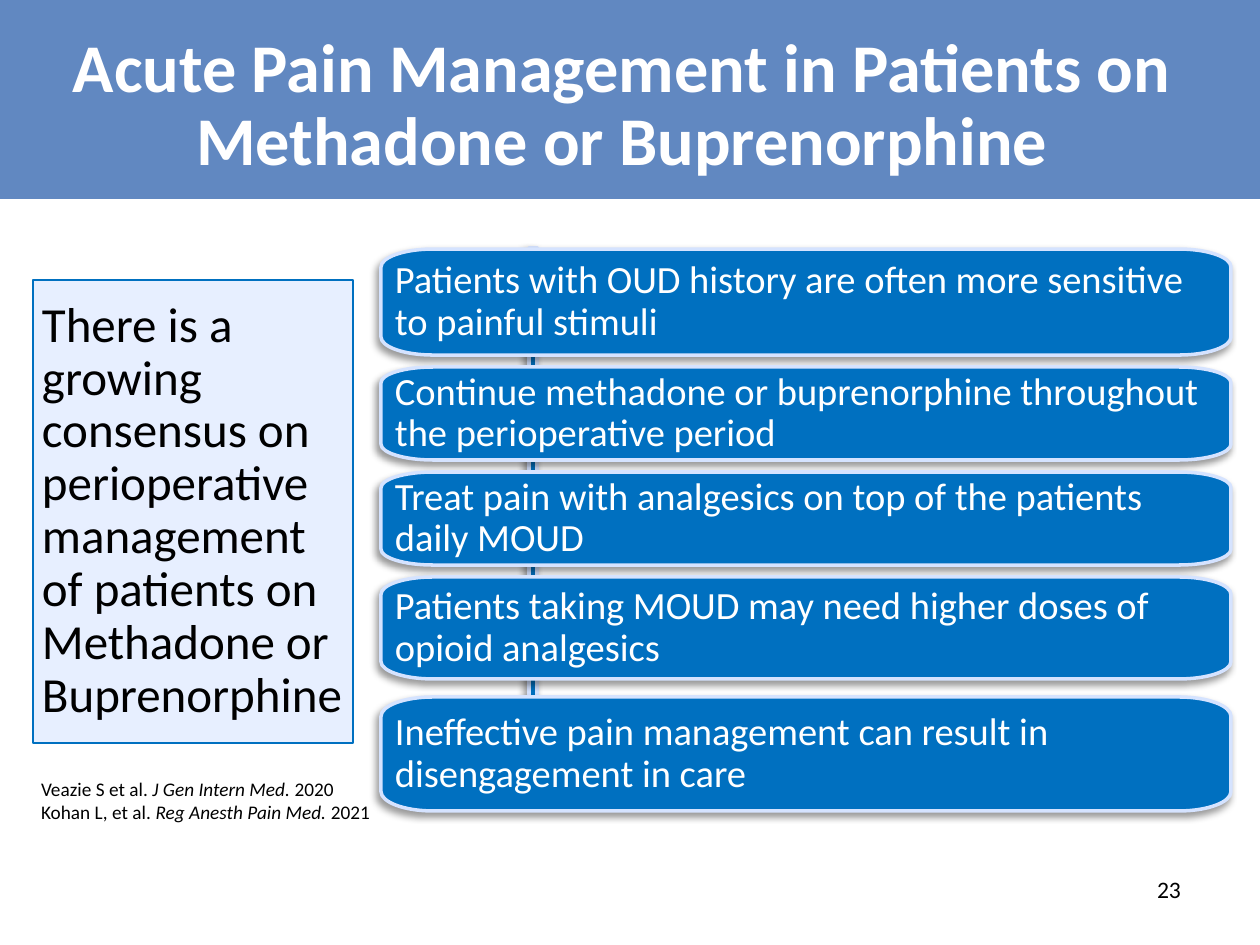
from lxml import etree
from pptx import Presentation
from pptx.dml.color import RGBColor
from pptx.enum.shapes import MSO_SHAPE as Shape
from pptx.enum.text import MSO_ANCHOR as Anchor, PP_ALIGN as Align
from pptx.oxml.ns import qn
from pptx.util import Emu, Pt

PX = 914400 / 126
BLUE, PALE_BLUE, WHITE, BLACK = "0070C0", "D5E3FF", "FFFFFF", "000000"

BAR_LEFT, BAR_WIDTH, CORNER_WIDTH = 381, 850, 52
CORNER_RATIO = 0.17
ARC_PULL = 0.55  # how far the control points lie towards the corner

ADVICE = [  # top, height, text
    (249, 106, "Patients with OUD history are often more sensitive to painful stimuli"),
    (367, 93, "Continue methadone or buprenorphine throughout the perioperative period"),
    (472, 93, "Treat pain with analgesics on top of the patients daily MOUD"),
    (577, 102, "Patients taking MOUD may need higher doses of opioid analgesics"),
    (697, 114, "Ineffective pain management can result in disengagement in care"),
]
CITATIONS = [
    [("Veazie S et al. ", False), ("J Gen Intern Med. ", True), ("2020", False)],
    [("Kohan L, et al. ", False), ("Reg Anesth Pain Med. ", True), ("2021", False)],
]


def px(length):
    return Emu(round(length * PX))


def color(value):
    return RGBColor.from_string(value)


def paint(shape, fill, line=None, width=0):
    shape.shadow.inherit = False
    shape.fill.solid()
    shape.fill.fore_color.rgb = color(fill)
    if line:
        shape.line.color.rgb = color(line)
        shape.line.width = Pt(width)
    else:
        shape.line.fill.background()


def add_shadow(shape):
    """Cast a soft shadow down and to the left."""
    effects = shape._element.spPr.find(qn("a:effectLst"))
    shadow = etree.SubElement(
        effects, qn("a:outerShdw"), blurRad=str(Pt(4)), dist=str(Pt(3)),
        dir=str(135 * 60000), algn="ctr", rotWithShape="0")
    tint = etree.SubElement(shadow, qn("a:srgbClr"), val=BLACK)
    etree.SubElement(tint, qn("a:alpha"), val="40000")


def write(shape, paragraphs, size, ink=BLACK, bold=None, align=Align.LEFT,
          anchor=Anchor.TOP, spacing=None, insets=(12, 6)):
    """Fill a shape with paragraphs, each a list of (text, italic) runs."""
    frame = shape.text_frame
    frame.word_wrap = True
    frame.vertical_anchor = anchor
    frame.margin_left = frame.margin_right = px(insets[0])
    frame.margin_top = frame.margin_bottom = px(insets[1])
    for index, runs in enumerate(paragraphs):
        para = frame.add_paragraph() if index else frame.paragraphs[0]
        para.alignment = align
        if spacing:
            para.line_spacing = spacing
        for text, italic in runs:
            span = para.add_run()
            span.text = text
            font = span.font
            font.name, font.size = "Calibri", Pt(size)
            font.bold, font.italic = bold, italic
            font.color.rgb = color(ink)


def add_text(page, left, top, width, height, paragraphs, size, **style):
    box = page.shapes.add_textbox(px(left), px(top), px(width), px(height))
    write(box, paragraphs, size, **style)


def add_rect(page, left, top, width, height, fill, line=None, line_width=0):
    rect = page.shapes.add_shape(
        Shape.RECTANGLE, px(left), px(top), px(width), px(height))
    paint(rect, fill, line, line_width)
    return rect


def bar_outline(top, height):
    """Ends of the corner arcs, clockwise from the left side's upper end."""
    rise = height * CORNER_RATIO
    right, bottom = BAR_LEFT + BAR_WIDTH, top + height
    near, far = BAR_LEFT + CORNER_WIDTH, right - CORNER_WIDTH
    upper, lower = top + rise, bottom - rise
    corners = [(BAR_LEFT, upper), (near, top), (far, top), (right, upper),
               (right, lower), (far, bottom), (near, bottom), (BAR_LEFT, lower)]
    return [(px(x), px(y)) for x, y in corners]


def round_corners(bar):
    """Turn every other straight segment of the outline into a curve."""
    outline = next(bar._element.spPr.iter(qn("a:path")))
    points = [(int(point.get("x")), int(point.get("y")))
              for point in outline.iter(qn("a:pt"))]
    segments = outline.findall(qn("a:lnTo"))
    for index in range(0, len(segments), 2):
        start, end = points[index], points[index + 1]
        leaves_upright = index % 4 == 0
        corner = (start[0], end[1]) if leaves_upright else (end[0], start[1])
        curve = etree.Element(qn("a:cubicBezTo"))
        controls = [[round(a + (c - a) * ARC_PULL) for a, c in zip(anchor, corner)]
                    for anchor in (start, end)]
        for x, y in (*controls, end):
            etree.SubElement(curve, qn("a:pt"), x=str(x), y=str(y))
        outline.replace(segments[index], curve)


def add_bar(page, top, height, text):
    start, *rest = bar_outline(top, height)
    builder = page.shapes.build_freeform(*start)
    builder.add_line_segments(rest, close=True)
    bar = builder.convert_to_shape()
    round_corners(bar)
    paint(bar, BLUE, PALE_BLUE, 2)
    add_shadow(bar)
    write(bar, [[(text, None)]], 22, ink=WHITE, anchor=Anchor.MIDDLE,
          spacing=0.9, insets=(14, 14))


def main():
    deck = Presentation()
    deck.slide_width, deck.slide_height = px(1260), px(945)
    page = deck.slides.add_slide(deck.slide_layouts[6])

    add_rect(page, 0, 0, 1260, 199, "6188C1")
    add_text(page, 1145, 869, 94, 42, [[("23", None)]], 13.5)
    add_text(page, 29, 771, 373, 59, CITATIONS, 11)
    title = "Acute Pain Management in Patients on Methadone or Buprenorphine"
    add_text(page, 12, 24, 1220, 166, [[(title, None)]], 39, ink=WHITE, bold=True,
             align=Align.CENTER, anchor=Anchor.MIDDLE, spacing=0.9)

    consensus = add_rect(page, 33, 280, 320, 463, "E7EFFF", BLUE, 0.75)
    statement = ("There is a growing consensus on perioperative management "
                 "of patients on Methadone or Buprenorphine")
    write(consensus, [[(statement, None)]], 28, anchor=Anchor.MIDDLE,
          spacing=0.9, insets=(9, 5))

    spine = add_rect(page, 529, 248, 8, 552, BLUE, PALE_BLUE, 2)
    add_shadow(spine)
    for top, height, text in ADVICE:
        add_bar(page, top, height, text)

    deck.save("out.pptx")


if __name__ == "__main__":
    main()
